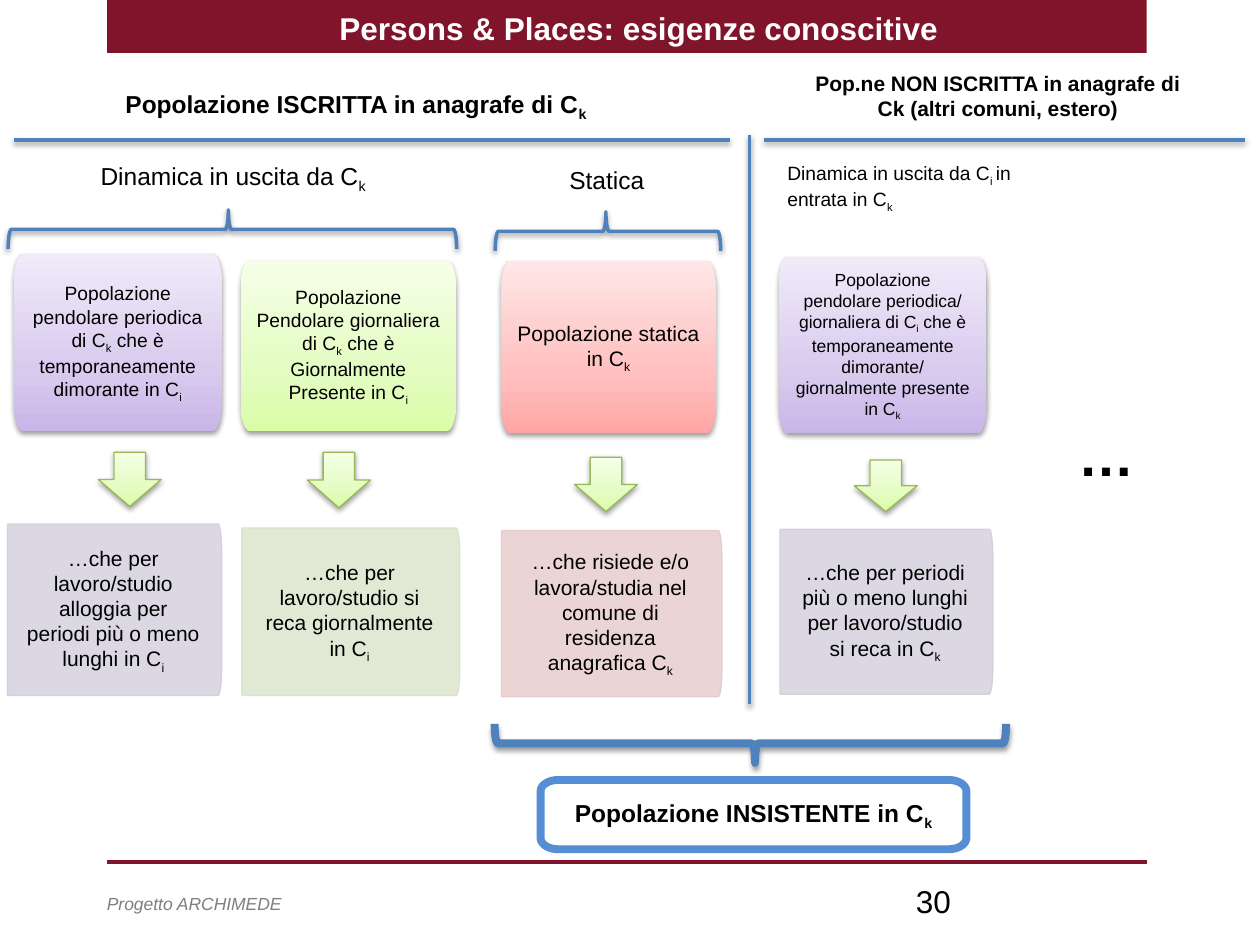
from dataclasses import dataclass
from math import cos, pi, sin

from lxml.etree import SubElement
from pptx import Presentation
from pptx.dml.color import RGBColor
from pptx.enum.shapes import MSO_CONNECTOR, MSO_SHAPE
from pptx.enum.text import MSO_ANCHOR, PP_ALIGN
from pptx.oxml.ns import qn
from pptx.util import Inches, Pt

COLORS = {
    "brand": "7F142A", "blue": "4F81BD", "frame": "558ED5", "black": "000000",
    "white": "FFFFFF", "gray": "7F7F7F", "arrow_edge": "98B955",
    "lilac": "D8D3E0", "lilac_edge": "D3CEDB", "sage": "DEE7D1",
    "sage_edge": "D9E2CC", "rose": "E8D0D0", "rose_edge": "E3CBCB",
}
GRADIENTS = {  # from bottom to top
    "violet": ("C9B5E8", "D8CBEE", "F0EAF9"),
    "green": ("DAFDA7", "E4FCC2", "F5FFE7"),
    "red": ("FFA6A5", "FFC0BF", "FFE7E7"),
}
Rect = tuple[float, float, float, float]


@dataclass
class Column:
    group: str
    size: int
    gradient: str
    group_at: Rect
    arrow_at: Rect
    outcome: str
    tint: str
    outcome_at: Rect


COLUMNS = [
    Column("Popolazione pendolare periodica di C~k~ che è temporaneamente dimorante in C~i",
           11, "violet", (0.11, 2.02, 1.65, 1.4), (0.78, 3.59, 0.5, 0.43),
           "…che per lavoro/studio alloggia per periodi più o meno lunghi in C~i",
           "lilac", (0.06, 4.16, 1.7, 1.36)),
    Column("Popolazione Pendolare giornaliera di C~k~ che è Giornalmente Presente in C~i",
           11, "green", (1.91, 2.07, 1.71, 1.35), (2.44, 3.59, 0.5, 0.44),
           "…che per lavoro/studio si reca giornalmente in C~i",
           "sage", (1.92, 4.19, 1.73, 1.33)),
    Column("Popolazione statica in C~k",
           12, "red", (3.98, 2.07, 1.7, 1.37), (4.56, 3.63, 0.5, 0.43),
           "…che risiede e/o lavora/studia nel comune di residenza anagrafica C~k",
           "rose", (3.98, 4.21, 1.75, 1.32)),
    Column("Popolazione pendolare periodica/ giornaliera di C~i~ che è temporaneamente "
           "dimorante/ giornalmente presente in C~k",
           10, "violet", (6.18, 2.04, 1.65, 1.4), (6.78, 3.65, 0.5, 0.41),
           "…che per periodi più o meno lunghi\nper lavoro/studio si reca in C~k",
           "lilac", (6.19, 4.2, 1.69, 1.31)),
]

prs = Presentation()
prs.slide_width, prs.slide_height = Inches(10), Inches(7.5)
s = prs.slides.add_slide(prs.slide_layouts[5])


def rgb(name: str) -> RGBColor:
    return RGBColor.from_string(COLORS[name])


def write(sp, text: str, size=12, color="black", bold=False, italic=False,
          align=PP_ALIGN.LEFT, anchor=MSO_ANCHOR.TOP, insets=(0.1, 0.05, 0.1, 0.05)):
    """Fill a shape with text; a tilde switches subscript on and off."""
    tf = sp.text_frame
    tf.word_wrap, tf.vertical_anchor = True, anchor
    tf.margin_left, tf.margin_top, tf.margin_right, tf.margin_bottom = map(Inches, insets)
    for n, line in enumerate(text.split("\n")):
        p = tf.add_paragraph() if n else tf.paragraphs[0]
        p.alignment = align
        for i, part in enumerate(line.split("~")):
            r = p.add_run()
            r.text = part
            r.font.name, r.font.size = "Arial", Pt(size)
            r.font.bold, r.font.italic = bold, italic
            r.font.color.rgb = rgb(color)
            if i % 2:
                r.font._element.set("baseline", "-25000")


def label(text: str, at: Rect, **fmt):
    write(s.shapes.add_textbox(*map(Inches, at)), text, **fmt)


def effects(sp, shadow: bool):
    """Replace the theme shadow by none or by a soft one below."""
    spPr = sp._element.spPr
    fx = SubElement(spPr, qn("a:effectLst"))
    if shadow:
        outer = SubElement(fx, qn("a:outerShdw"), blurRad="40000", dist="20000",
                           dir="5400000", rotWithShape="0")
        clr = SubElement(outer, qn("a:srgbClr"), val=COLORS["black"])
        SubElement(clr, qn("a:alpha"), val="38000")


def paint(sp, fill=None, gradient=None, line=None, width=0.75, shadow=False, alpha=None):
    spPr = sp._element.spPr
    if gradient:
        sp.fill.gradient()
        sp.fill.gradient_angle = 90
        stops = spPr.find(".//" + qn("a:gsLst"))
        for old in list(stops):
            stops.remove(old)
        for pos, value in zip((0, 35, 100), GRADIENTS[gradient]):
            gs = SubElement(stops, qn("a:gs"), pos=str(pos * 1000))
            SubElement(gs, qn("a:srgbClr"), val=value)
    elif fill:
        sp.fill.solid()
        sp.fill.fore_color.rgb = rgb(fill)
    else:
        sp.fill.background()
    if line:
        sp.line.color.rgb, sp.line.width = rgb(line), Pt(width)
    else:
        sp.line.fill.background()
    if alpha:
        for clr in spPr.iter(qn("a:srgbClr")):
            SubElement(clr, qn("a:alpha"), val=str(alpha * 1000))
    effects(sp, shadow)


def preset(kind, at: Rect, rotation=0, **look):
    sp = s.shapes.add_shape(kind, *map(Inches, at))
    sp.rotation = rotation
    paint(sp, **look)
    return sp


def rounded(at: Rect, left: float, right: float, ry: float, **look):
    """Box with elliptical corners: own radius on each side, shared height."""
    x, y, w, h = at
    corners = [(x + w - right, y + ry, right, -90), (x + w - right, y + h - ry, right, 0),
               (x + left, y + h - ry, left, 90), (x + left, y + ry, left, 180)]
    pts = []
    for cx, cy, rx, start in corners:
        if rx == 0:
            pts.append((x, y if start == 180 else y + h))
            continue
        for step in range(0, 91, 10):
            a = (start + step) * pi / 180
            pts.append((cx + rx * cos(a), cy + ry * sin(a)))
    pts = [(Inches(px), Inches(py)) for px, py in pts]
    fb = s.shapes.build_freeform(*pts[0])
    fb.add_line_segments(pts[1:], close=True)
    sp = fb.convert_to_shape()
    paint(sp, **look)
    return sp


def rule(x1: float, y1: float, x2: float, y2: float, color="blue", shadow=True):
    c = s.shapes.add_connector(MSO_CONNECTOR.STRAIGHT, *map(Inches, (x1, y1, x2, y2)))
    c.line.color.rgb, c.line.width = rgb(color), Pt(2)
    effects(c, shadow)


def brace(at: Rect, rotation: int, width: float):
    sp = preset(MSO_SHAPE.RIGHT_BRACE, at, rotation, line="blue", width=width, shadow=True)
    sp.adjustments[0], sp.adjustments[1] = 0.083, 0.491


CENTER = {"align": PP_ALIGN.CENTER}
BOXED = {**CENTER, "anchor": MSO_ANCHOR.MIDDLE}

# Title on its band, and footer rule
band = preset(MSO_SHAPE.RECTANGLE, (0.85, 0, 8.25, 0.42), fill="brand")
rule(0.85, 6.84, 9.1, 6.84, color="brand", shadow=False)
title = s.shapes.title
title.left, title.top, title.width, title.height = map(Inches, (0.93, 0, 8.28, 0.44))
write(title, "Persons & Places: esigenze conoscitive", size=18, color="white", bold=True, **BOXED)
s.shapes._spTree.insert(2, band._element)

# Headings and dividers
label("Popolazione ISCRITTA in anagrafe di C~k", (0.7, 0.66, 4.25, 0.34),
      size=14, bold=True, **CENTER)
label("Pop.ne NON ISCRITTA in anagrafe di\nCk (altri comuni, estero)",
      (5.93, 0.51, 3.98, 0.5), bold=True, **CENTER)
rule(0.11, 1.11, 5.79, 1.11)
rule(6.06, 1.11, 9.88, 1.11)
rule(5.95, 1.07, 5.95, 5.59)
label("Dinamica in uscita da C~k", (0.7, 1.23, 2.37, 0.34), size=14)
label("Statica", (4.42, 1.26, 0.9, 0.34), size=14)
label("Dinamica in uscita da C~i ~in entrata in C~k", (6.15, 1.23, 1.98, 0.47), size=11)
brace((1.69, 0.04, 0.31, 3.56), 270, 2)
brace((4.67, 0.94, 0.31, 1.79), 270, 2)

# Population columns: group, arrow, outcome
for col in COLUMNS:
    sp = rounded(col.group_at, 0.07, 0.07, 0.23, gradient=col.gradient, shadow=True)
    write(sp, col.group, size=col.size, insets=(0.12, 0.08, 0.12, 0.08), **BOXED)
    preset(MSO_SHAPE.DOWN_ARROW, col.arrow_at, gradient="green", line="arrow_edge", shadow=True)
    sp = rounded(col.outcome_at, 0, 0.03, 0.22, fill=col.tint, line=col.tint + "_edge", alpha=90)
    write(sp, col.outcome, insets=(0.15, 0.1, 0.17, 0.1), **BOXED)
label("…", (8.46, 3.29, 0.91, 0.64), size=32, bold=True)

# Resulting population
brace((5.8, 3.87, 0.31, 4.06), 90, 4.5)
sp = rounded((4.29, 6.19, 3.38, 0.55), 0.14, 0.14, 0.09, fill="white", line="frame", width=4.5)
write(sp, "Popolazione INSISTENTE in C~k", size=14, bold=True,
      insets=(0.12, 0.08, 0.12, 0.08), **BOXED)

# Footer
label("Progetto ARCHIMEDE", (0.75, 7.04, 6.16, 0.27), size=10, color="gray", italic=True)
label("30", (7.17, 6.95, 2.33, 0.4), size=18)

prs.save("out.pptx")
